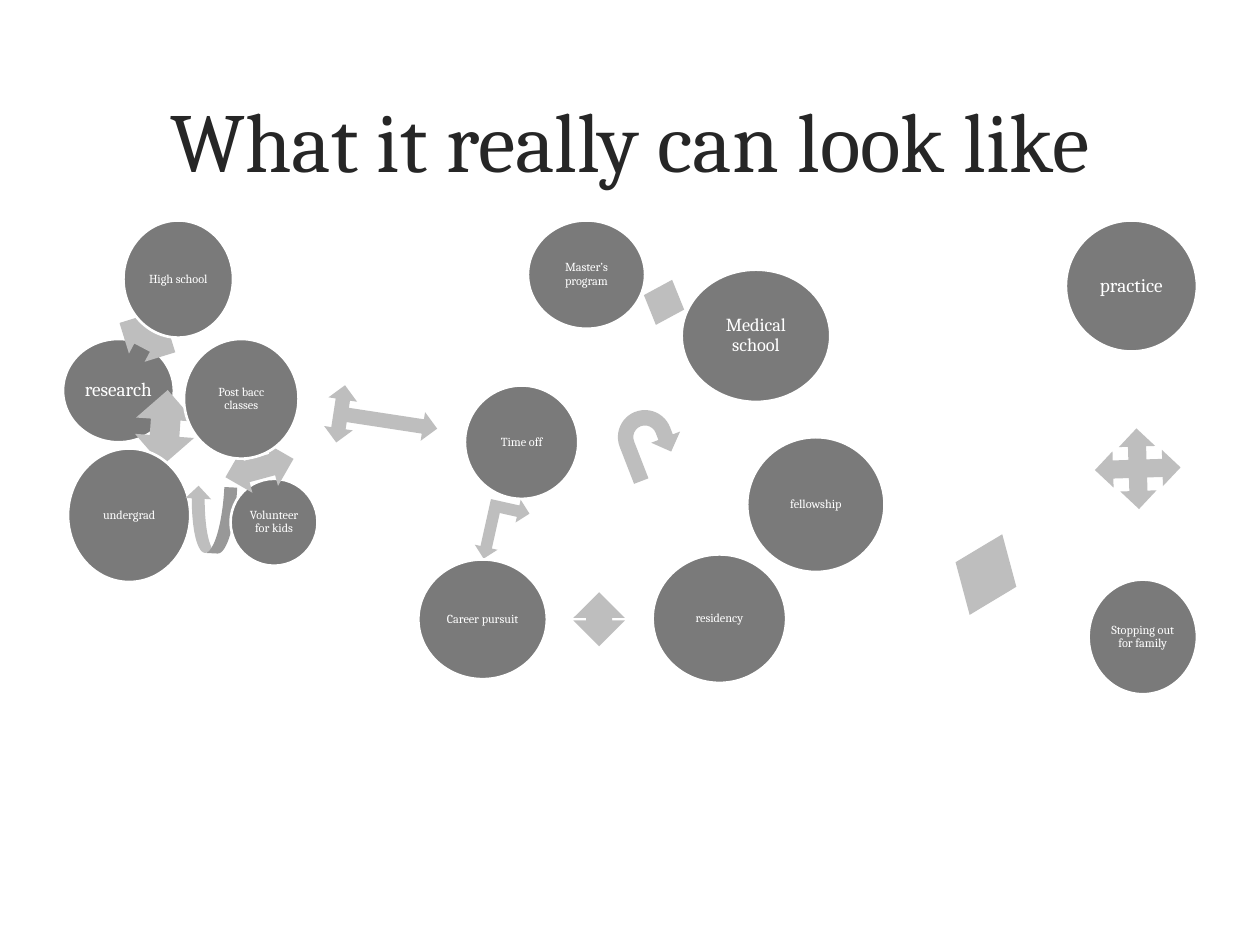
from pptx import Presentation
from pptx.dml.color import RGBColor
from pptx.enum.shapes import MSO_SHAPE
from pptx.enum.text import MSO_ANCHOR, PP_ALIGN
from pptx.util import Inches, Pt

OVAL = MSO_SHAPE.OVAL
LEFT_RIGHT = MSO_SHAPE.LEFT_RIGHT_ARROW
UP_DOWN = MSO_SHAPE.UP_DOWN_ARROW
CURVED_LEFT = MSO_SHAPE.CURVED_LEFT_ARROW
LEFT_RIGHT_UP = MSO_SHAPE.LEFT_RIGHT_UP_ARROW
LEFT_UP = MSO_SHAPE.LEFT_UP_ARROW
U_TURN = MSO_SHAPE.U_TURN_ARROW
QUAD = MSO_SHAPE.QUAD_ARROW
MIDDLE = MSO_ANCHOR.MIDDLE
CENTER = PP_ALIGN.CENTER

FONT = "Cambria"
COLORS = {"title": "262626", "circle": "7A7A7A", "arrow": "BEBEBE", "white": "FFFFFF"}

# Each stage: label, text size, circle box, then the arrow leading on from it
# (preset, rotation, box). Boxes are left, top, width, height in inches.
STAGES = [
    ("research", 11, (0.5, 2.69, 0.88, 0.82), (LEFT_RIGHT, 27.8, (0.92, 2.5, 0.5, 0.36))),
    ("High school", 7, (0.98, 1.75, 0.87, 0.93), (LEFT_RIGHT, 94, (1.01, 3.16, 0.6, 0.47))),
    ("undergrad", 7, (0.54, 3.56, 0.97, 1.06), (CURVED_LEFT, 92.9, (1.4, 3.92, 0.53, 0.41))),
    ("Volunteer for kids", 7, (1.83, 3.8, 0.69, 0.69),
     (LEFT_RIGHT, 344.9, (1.78, 3.54, 0.56, 0.35))),
    ("Post bacc classes", 7, (1.46, 2.69, 0.91, 0.95),
     (LEFT_RIGHT_UP, 98.7, (2.8, 2.89, 0.46, 0.89))),
    ("Time off", 7, (3.69, 3.06, 0.9, 0.9), (LEFT_UP, 192.6, (3.8, 3.94, 0.37, 0.52))),
    ("Career pursuit", 7, (3.32, 4.44, 1.02, 0.95), (LEFT_RIGHT, 90, (4.54, 4.71, 0.43, 0.41))),
    ("residency", 7, (5.18, 4.4, 1.06, 1.02), (U_TURN, 338.8, (4.92, 3.24, 0.49, 0.53))),
    ("Master’s program", 7, (4.19, 1.75, 0.93, 0.86),
     (UP_DOWN, 109.8, (5.08, 2.23, 0.38, 0.34))),
    ("Medical school", 10.5, (5.41, 2.14, 1.18, 1.05), None),
    ("fellowship", 7, (5.93, 3.47, 1.09, 1.07), (UP_DOWN, 112, (7.48, 4.3, 0.69, 0.52))),
    ("Stopping out for family", 7, (8.64, 4.6, 0.86, 0.91),
     (QUAD, 358.2, (8.69, 3.4, 0.68, 0.64))),
    ("practice", 11, (8.46, 1.75, 1.04, 1.04), None),
]


def write_text(shape, text, *, size, color, inset, line_spacing=1.0):
    frame = shape.text_frame
    frame.word_wrap = True
    frame.vertical_anchor = MIDDLE
    frame.margin_left = frame.margin_right = Inches(inset)
    frame.margin_top = frame.margin_bottom = Inches(inset)
    paragraph = frame.paragraphs[0]
    paragraph.text = text
    paragraph.alignment = CENTER
    paragraph.line_spacing = line_spacing
    paragraph.font.name = FONT
    paragraph.font.size = Pt(size)
    paragraph.font.color.rgb = RGBColor.from_string(COLORS[color])


def add_filled_shape(preset, box, color):
    shape = slide.shapes.add_shape(preset, *map(Inches, box))
    shape.shadow.inherit = False
    shape.fill.solid()
    shape.fill.fore_color.rgb = RGBColor.from_string(COLORS[color])
    shape.line.fill.background()
    return shape


presentation = Presentation()
presentation.slide_width = Inches(10)
presentation.slide_height = Inches(7.5)
slide = presentation.slides.add_slide(presentation.slide_layouts[6])

title = slide.shapes.add_textbox(Inches(0.5), Inches(0.63), Inches(9), Inches(0.94))
write_text(title, "What it really can look like", size=48, color="title", inset=0.05)

for label, size, circle_box, arrow in STAGES:
    circle = add_filled_shape(OVAL, circle_box, "circle")
    circle.line.color.rgb = RGBColor.from_string(COLORS["white"])
    circle.line.width = Pt(1.5)
    write_text(circle, label, size=size, color="white", inset=0.01, line_spacing=0.9)
    if arrow:
        preset, rotation, arrow_box = arrow
        add_filled_shape(preset, arrow_box, "arrow").rotation = rotation

presentation.save("out.pptx")
